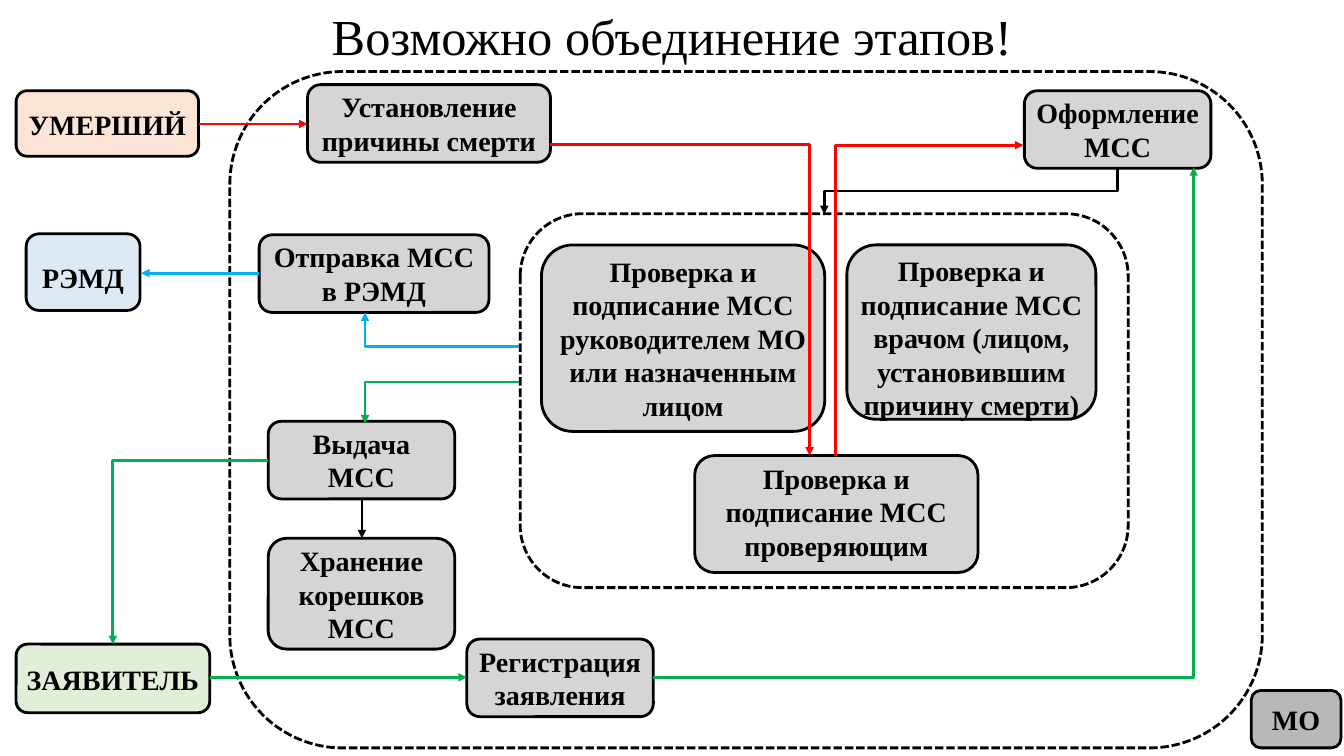
from lxml import etree
from pptx import Presentation
from pptx.dml.color import RGBColor
from pptx.enum.dml import MSO_LINE
from pptx.enum.shapes import MSO_CONNECTOR, MSO_SHAPE
from pptx.enum.text import MSO_ANCHOR, PP_ALIGN
from pptx.oxml.ns import qn
from pptx.util import Inches, Pt

ROUNDED = MSO_SHAPE.ROUNDED_RECTANGLE
STRAIGHT = MSO_CONNECTOR.STRAIGHT
ELBOW = MSO_CONNECTOR.ELBOW
DASHED = MSO_LINE.SQUARE_DOT
TOP = MSO_ANCHOR.TOP
MIDDLE = MSO_ANCHOR.MIDDLE
CENTER = PP_ALIGN.CENTER

BLACK = RGBColor(0x00, 0x00, 0x00)
RED = RGBColor(0xFF, 0x00, 0x00)
GREEN = RGBColor(0x00, 0xB0, 0x50)
BLUE = RGBColor(0x00, 0xB0, 0xF0)
PEACH = RGBColor(0xF8, 0xCB, 0xAD)
PALE_GREEN = RGBColor(0xC5, 0xE0, 0xB4)
PALE_BLUE = RGBColor(0xBD, 0xD7, 0xEE)
GRAY = RGBColor(0xAF, 0xAB, 0xAB)
DARK_GRAY = RGBColor(0x76, 0x71, 0x71)

STEPS = [
    ((0.16, 0.9, 1.81, 0.65), PEACH, ["УМЕРШИЙ"], 0.12),
    ((0.16, 6.39, 1.92, 0.68), PALE_GREEN, ["ЗАЯВИТЕЛЬ"], 0.13),
    ((0.26, 2.32, 1.13, 0.76), PALE_BLUE, ["РЭМД"], 0.21),
    ((4.63, 6.34, 1.85, 0.77), GRAY, ["Регистрация заявления"], 0),
    ((3.05, 0.84, 2.41, 0.77), GRAY, ["Установление причины смерти"], 0),
    ((10.16, 0.9, 1.85, 0.77), GRAY, ["Оформление МСС"], 0),
    ((8.4, 2.43, 2.47, 1.73), GRAY,
     ["Проверка и подписание МСС врачом (лицом, установившим причину смерти)"], 0),
    ((5.37, 2.43, 2.81, 1.85), GRAY,
     ["Проверка и подписание МСС руководителем МО или назначенным лицом"], 0),
    ((6.89, 4.52, 2.81, 1.16), GRAY, ["Проверка и подписание МСС проверяющим"], 0),
    ((2.66, 4.18, 1.85, 0.77), GRAY, ["Выдача МСС"], 0),
    ((2.57, 2.33, 2.28, 0.77), GRAY, ["Отправка МСС в РЭМД"], 0),
    ((2.66, 5.34, 1.85, 1.1), GRAY, ["Хранение корешков", "МСС"], 0),
    ((12.41, 6.85, 0.89, 0.57), DARK_GRAY, ["МО"], 0.07),
]

STRAIGHT_ARROWS = [
    ((2.08, 6.72), (4.63, 6.72), GREEN),
    ((1.97, 1.23), (3.05, 1.23), RED),
    ((3.59, 4.95), (3.59, 5.34), BLACK),
    ((2.57, 2.71), (1.4, 2.71), BLUE),
]

BENT_ARROWS = [
    ((6.48, 1.66, 5.36, 5.06), 0, "v", "bentConnector3", 100000, GREEN),
    ((9.4, 0.44, 0.46, 2.91), 90, "", "bentConnector3", 50000, BLACK),
    ((3.62, 3.79, 1.53, 0.41), 180, "v", "bentConnector2", None, GREEN),
    ((3.62, 3.1, 1.53, 0.34), 180, "", "bentConnector3", 100000, BLUE),
    ((1.12, 4.57, 1.54, 1.82), 180, "v", "bentConnector2", None, GREEN),
    ((5.2, 1.69, 3.09, 2.57), 270, "h", "bentConnector3", 0, RED),
    ((7.68, 2.05, 3.08, 1.86), 90, "hv", "bentConnector3", 100000, RED),
]


class Diagram:
    font_name = "Times New Roman"
    line_width = Pt(2)
    corner_inset = 0.049

    def __init__(self, slide):
        self.slide = slide

    def add_text(self, frame, paragraphs, size, bold):
        frame.word_wrap = True
        for index, text in enumerate(paragraphs):
            paragraph = frame.paragraphs[0] if index == 0 else frame.add_paragraph()
            paragraph.alignment = CENTER
            run = paragraph.add_run()
            run.text = text
            run.font.name = self.font_name
            run.font.size = Pt(size)
            run.font.bold = bold
            run.font.color.rgb = BLACK

    def title(self, text):
        title = self.slide.shapes.title
        title.left, title.top = Inches(0), Inches(0)
        title.width, title.height = Inches(13.33), Inches(0.71)
        title.text_frame.vertical_anchor = MIDDLE
        self.add_text(title.text_frame, [text], 36, False)

    def box(self, place):
        shape = self.slide.shapes.add_shape(ROUNDED, *map(Inches, place))
        shape.shadow.inherit = False
        shape.line.color.rgb = BLACK
        shape.line.width = self.line_width
        return shape

    def boundary(self, place):
        shape = self.box(place)
        shape.fill.background()
        shape.line.dash_style = DASHED

    def step(self, place, color, paragraphs, text_drop):
        shape = self.box(place)
        shape.fill.solid()
        shape.fill.fore_color.rgb = color
        fill_element = shape._element.spPr.find(qn("a:solidFill"))
        color_element = fill_element.find(qn("a:srgbClr"))
        etree.SubElement(color_element, qn("a:alpha"), val="50000")
        corner = self.corner_inset * min(place[2:])
        frame = shape.text_frame
        frame.vertical_anchor = TOP
        frame.margin_left = frame.margin_right = Inches(max(0, 0.1 - corner))
        frame.margin_top = Inches(max(0, 0.05 + text_drop - corner))
        frame.margin_bottom = Inches(0)
        self.add_text(frame, paragraphs, 20, True)

    def arrow(self, kind, start, end, color):
        connector = self.slide.shapes.add_connector(kind, *map(Inches, (*start, *end)))
        connector.line.color.rgb = color
        connector.line.width = self.line_width
        properties = connector._element.spPr
        etree.SubElement(properties.find(qn("a:ln")), qn("a:tailEnd"), type="triangle")
        etree.SubElement(properties, qn("a:effectLst"))
        return connector

    def bent_arrow(self, place, rotation, flips, preset, bend, color):
        left, top, width, height = place
        end = (left + width, top + height)
        connector = self.arrow(ELBOW, (left, top), end, color)
        properties = connector._element.spPr
        transform = properties.find(qn("a:xfrm"))
        transform.set("rot", str(rotation * 60000))
        for flip in flips:
            transform.set("flip" + flip.upper(), "1")
        geometry = properties.find(qn("a:prstGeom"))
        geometry.set("prst", preset)
        if bend is not None:
            adjustments = geometry.find(qn("a:avLst"))
            if adjustments is None:
                adjustments = etree.SubElement(geometry, qn("a:avLst"))
            etree.SubElement(adjustments, qn("a:gd"), name="adj1", fmla=f"val {bend}")


def main():
    presentation = Presentation()
    presentation.slide_width = Inches(13.33)
    presentation.slide_height = Inches(7.5)
    slide = presentation.slides.add_slide(presentation.slide_layouts[5])
    diagram = Diagram(slide)
    diagram.title("Возможно объединение этапов!")
    diagram.boundary((2.28, 0.71, 10.24, 6.71))
    diagram.boundary((5.16, 2.12, 6.03, 3.71))
    for step in STEPS:
        diagram.step(*step)
    for start, end, color in STRAIGHT_ARROWS:
        diagram.arrow(STRAIGHT, start, end, color)
    for bent_arrow in BENT_ARROWS:
        diagram.bent_arrow(*bent_arrow)
    presentation.save("out.pptx")


if __name__ == "__main__":
    main()
